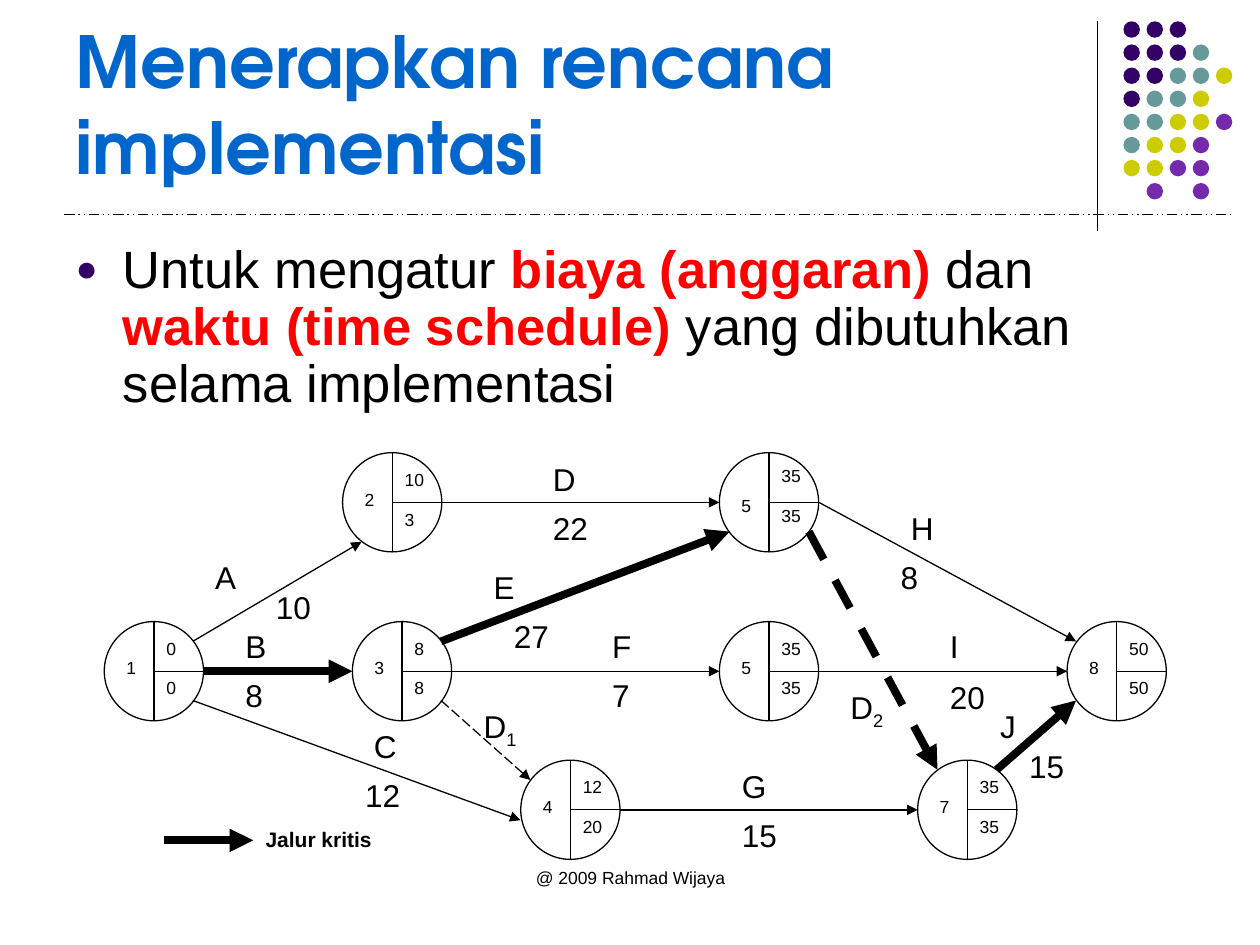
from lxml import etree
from pptx import Presentation
from pptx.dml.color import RGBColor
from pptx.enum.dml import MSO_LINE
from pptx.enum.shapes import MSO_CONNECTOR, MSO_SHAPE
from pptx.enum.text import MSO_ANCHOR, MSO_AUTO_SIZE, PP_ALIGN
from pptx.oxml.ns import qn
from pptx.util import Pt

BLACK = RGBColor(0x00, 0x00, 0x00)
BLUE = RGBColor(0x00, 0x66, 0xCC)
RED = RGBColor(0xFF, 0x00, 0x00)
INDIGO = RGBColor(0x33, 0x00, 0x66)
TEAL = RGBColor(0x66, 0x99, 0x99)
YELLOW = RGBColor(0xCC, 0xCC, 0x00)
VIOLET = RGBColor(0x75, 0x2A, 0xAE)

STRAIGHT = MSO_CONNECTOR.STRAIGHT
OVAL = MSO_SHAPE.OVAL
DASH = MSO_LINE.DASH
LONG_DASH = MSO_LINE.LONG_DASH
DASH_DOT_DOT = MSO_LINE.DASH_DOT_DOT
LEFT, CENTER = PP_ALIGN.LEFT, PP_ALIGN.CENTER
BOTTOM, TOP = MSO_ANCHOR.BOTTOM, MSO_ANCHOR.TOP
NO_AUTOFIT, FIT_SHAPE = MSO_AUTO_SIZE.NONE, MSO_AUTO_SIZE.SHAPE_TO_FIT_TEXT

BODY_FONT = "Arial"
TITLE_FONT = "TeX Gyre Adventor"
THIN, THICK = 0.75, 4.5
NODE_SIZE = 56.7

DOT_COLORS = {"P": INDIGO, "T": TEAL, "Y": YELLOW, "V": VIOLET}
DOT_ROWS = ["PPP", "PPPT", "PPTTY", "PTTY", "TTYYV", "TYYV", "YYVV", " V V"]

BODY_RUNS = [
    ("Untuk mengatur ", False),
    ("biaya (anggaran)", True),
    (" dan ", False),
    ("waktu (time schedule)", True),
    (" yang dibutuhkan selama implementasi", False),
]

NODES = [
    (609.8, 355.2, "8", "50", "50", 0, 0),
    (411.1, 258.7, "5", "35", "35", -2.2, 3.6),
    (524.4, 434.4, "7", "35", "35", 0, 0),
    (411.1, 355.2, "5", "35", "35", 0, 0),
    (297.6, 434.4, "4", "12", "20", 0, 0),
    (201.4, 355.2, "3", "8", "8", 0, 0),
    (195.8, 258.7, "2", "10", "3", 0, 0),
    (59.6, 355.2, "1", "0", "0", 0, 0),
]

ARROWS = [
    ((116, 383.6), (201.4, 383.6), THICK, None),
    ((258, 383.6), (411.1, 383.6), THIN, None),
    ((468, 383.6), (609.8, 383.6), THIN, None),
    ((110.2, 366.5), (206.6, 309.6), THIN, None),
    ((110.2, 400.3), (297.4, 468.7), THIN, None),
    ((252, 400.3), (303.1, 445.7), THIN, LONG_DASH),
    ((252, 287.1), (411.1, 287.1), THIN, None),
    ((252, 366.5), (416.9, 303.8), THICK, None),
    ((354.3, 462.8), (524.4, 462.8), THIN, None),
    ((462.2, 303.8), (535.7, 439.9), THICK, DASH),
    ((468, 287.1), (614.9, 366.5), THIN, None),
    ((569.5, 439.9), (614.9, 400.3), THICK, None),
    ((93.6, 480.2), (144.7, 480.2), THICK, None),
]

LABELS = [
    ("A", "", 115.9, 315.4), ("10", "", 150.5, 332.6),
    ("B", "", 133.2, 355), ("8", "", 133.2, 383),
    ("C", "", 206.6, 411.8), ("12", "", 201.6, 439.9),
    ("D", "", 308.9, 259.2), ("22", "", 308.9, 287.3),
    ("E", "", 275, 321.1), ("27", "", 286.6, 349.2),
    ("F", "", 342.7, 355), ("7", "", 342.7, 383),
    ("G", "", 416.9, 434.9), ("15", "", 416.9, 463),
    ("H", "", 513.4, 287.3), ("8", "", 507.6, 315.4),
    ("I", "", 535.7, 355), ("20", "", 535.7, 383.8),
    ("J", "", 564.5, 400.3), ("15", "", 581, 423.4),
    ("D", "1", 269.3, 400.3), ("D", "2", 478.8, 389.5),
]


def place(shape, left, top, width, height):
    """Move and size a shape in points."""
    shape.left, shape.top = Pt(left), Pt(top)
    shape.width, shape.height = Pt(width), Pt(height)


def style_run(run, size, color=BLACK, bold=False, font=BODY_FONT):
    """Give a run its font, size, colour and weight."""
    run.font.name = font
    run.font.size = Pt(size)
    run.font.bold = bold
    run.font.color.rgb = color


def add_line(slide, start, end, width=THIN, dash=None, arrow=False):
    """Draw a black line, optionally dashed or with an arrowhead."""
    points = [Pt(value) for value in (*start, *end)]
    connector = slide.shapes.add_connector(STRAIGHT, *points)
    connector.line.color.rgb = BLACK
    connector.line.width = Pt(width)
    if dash is not None:
        connector.line.dash_style = dash
    properties = connector._element.spPr
    if arrow:
        line = properties.find(qn("a:ln"))
        etree.SubElement(line, qn("a:tailEnd"), type="triangle")
    etree.SubElement(properties, qn("a:effectLst"))


def add_circle(slide, left, top, size, fill=None):
    """Draw a filled dot, or an outlined circle when there is no fill."""
    circle = slide.shapes.add_shape(OVAL, Pt(left), Pt(top), Pt(size), Pt(size))
    circle.shadow.inherit = False
    if fill is None:
        circle.fill.background()
        circle.line.color.rgb = BLACK
        circle.line.width = Pt(THIN)
    else:
        circle.fill.solid()
        circle.fill.fore_color.rgb = fill
        circle.line.fill.background()


def add_text(slide, text, left, top, width, height, size, bold=False, subscript=""):
    """Add a one-line text box with an optional subscript and return it."""
    box = slide.shapes.add_textbox(Pt(left), Pt(top), Pt(width), Pt(height))
    box.text_frame.word_wrap = True
    box.text_frame.auto_size = FIT_SHAPE
    paragraph = box.text_frame.paragraphs[0]
    paragraph.text = text
    if subscript:
        run = paragraph.add_run()
        run.text = subscript
        run._r.get_or_add_rPr().set("baseline", "-25000")
    for run in paragraph.runs:
        style_run(run, size, bold=bold)
    return box


def add_node(slide, left, top, number, upper, lower, value_shift, number_shift):
    """Draw an event circle with its number and two times."""
    half = NODE_SIZE / 2
    middle, center = left + half, top + half
    add_circle(slide, left, top, NODE_SIZE)
    add_line(slide, (middle, top), (middle, top + NODE_SIZE))
    add_line(slide, (left + NODE_SIZE, center), (middle, center))
    value_top = top + 5.7 + value_shift
    add_text(slide, upper, middle, value_top, half, 19.4, 10)
    add_text(slide, lower, middle, value_top + 22.7, half, 19.4, 10)
    add_text(slide, number, left + 5.5, top + 17 + number_shift, 17.3, 19.4, 10)


def add_decoration(slide):
    """Draw the dot pattern and the two ruling lines."""
    add_line(slide, (627, 12.2), (627, 131.8))
    for row, colors in enumerate(DOT_ROWS):
        for column, key in enumerate(colors):
            if key in DOT_COLORS:
                left, top = 642 + 13.2 * column, 12.2 + 13.2 * row
                add_circle(slide, left, top, 9.4, DOT_COLORS[key])
    add_line(slide, (36.7, 122.4), (705.6, 122.4), dash=DASH_DOT_DOT)


def fill_title(title):
    """Write the slide title."""
    place(title, 36, 9.4, 594, 102.2)
    frame = title.text_frame
    frame.text = "Menerapkan rencana implementasi"
    frame.word_wrap = True
    frame.auto_size = NO_AUTOFIT
    frame.vertical_anchor = BOTTOM
    paragraph = frame.paragraphs[0]
    paragraph.alignment = LEFT
    style_run(paragraph.runs[0], 41, BLUE, True, TITLE_FONT)


def fill_body(body):
    """Write the bullet with its highlighted phrases."""
    place(body, 36, 135.4, 648, 112.3)
    frame = body.text_frame
    frame.word_wrap = True
    frame.auto_size = NO_AUTOFIT
    frame.vertical_anchor = TOP
    paragraph = frame.paragraphs[0]
    paragraph.line_spacing = 0.9
    paragraph.space_before = Pt(6)
    for text, highlighted in BODY_RUNS:
        run = paragraph.add_run()
        run.text = text
        style_run(run, 30, RED if highlighted else BLACK, highlighted)
    properties = paragraph._p.get_or_add_pPr()
    properties.set("marL", str(Pt(27)))
    properties.set("indent", str(Pt(-27)))
    color = etree.SubElement(properties, qn("a:buClr"))
    etree.SubElement(color, qn("a:srgbClr"), val=str(INDIGO))
    etree.SubElement(properties, qn("a:buSzPct"), val="70000")
    etree.SubElement(properties, qn("a:buFont"), typeface=BODY_FONT)
    etree.SubElement(properties, qn("a:buChar"), char="●")


def main():
    """Build the slide and save it."""
    presentation = Presentation()
    presentation.slide_width, presentation.slide_height = Pt(720), Pt(540)
    slide = presentation.slides.add_slide(presentation.slide_layouts[1])
    add_decoration(slide)
    fill_title(slide.shapes.title)
    fill_body(slide.placeholders[1])
    for node in NODES:
        add_node(slide, *node)
    for start, end, width, dash in ARROWS:
        add_line(slide, start, end, width, dash, arrow=True)
    for text, subscript, left, top in LABELS:
        width = 39.7 if len(text + subscript) > 1 else 28.3
        add_text(slide, text, left, top, width, 28.8, 18, subscript=subscript)
    add_text(slide, "Jalur kritis", 144.7, 468.7, 90.7, 21.6, 12, bold=True)
    footer = add_text(slide, "@ 2009 Rahmad Wijaya", 246.2, 491.8, 228.2, 36, 10)
    footer.text_frame.auto_size = NO_AUTOFIT
    footer.text_frame.paragraphs[0].alignment = CENTER
    presentation.save("out.pptx")


if __name__ == "__main__":
    main()
